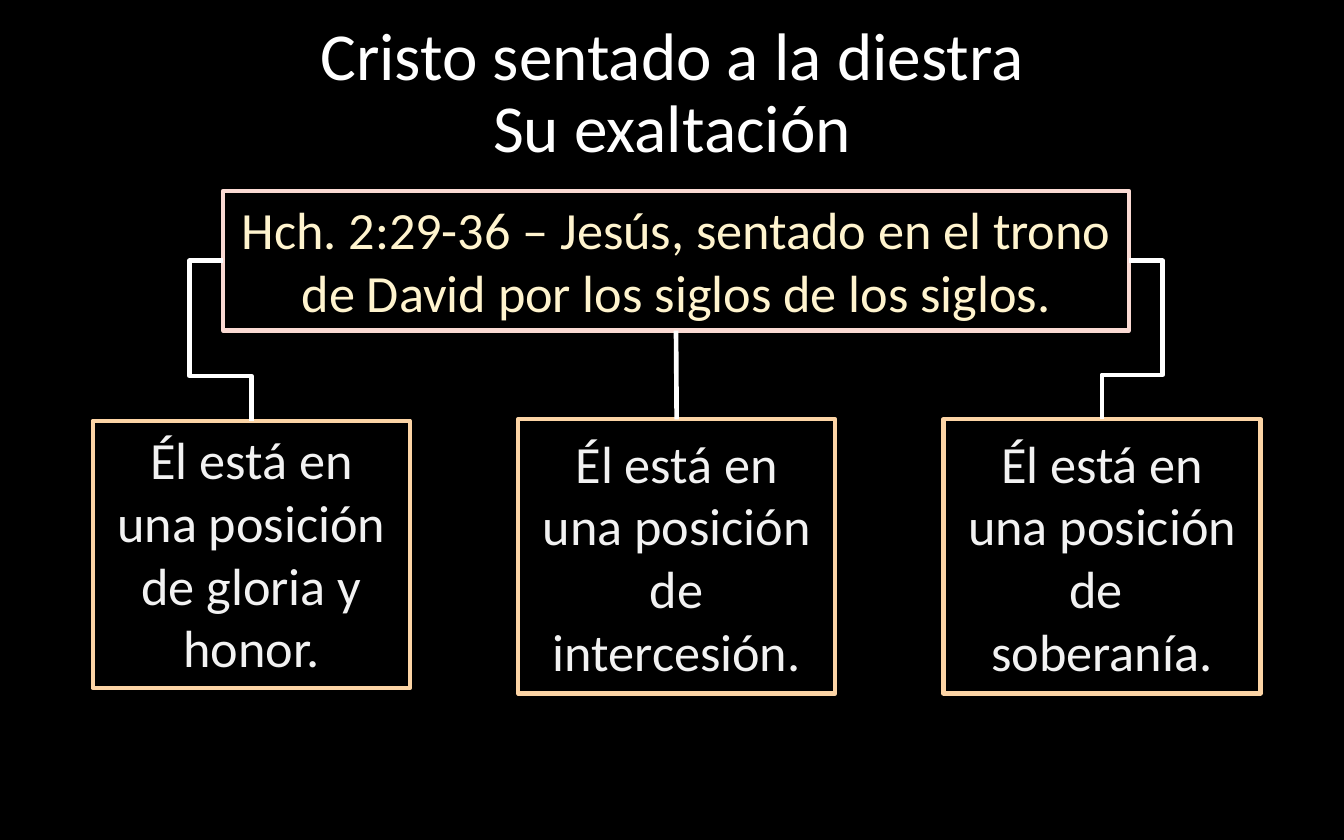
import dataclasses

import lxml.etree
import pptx
import pptx.dml.color
import pptx.enum.shapes
import pptx.enum.text
import pptx.oxml.ns
import pptx.util

ANCHOR = pptx.enum.text.MSO_ANCHOR
AUTO_SIZE = pptx.enum.text.MSO_AUTO_SIZE
CONNECTOR = pptx.enum.shapes.MSO_CONNECTOR

WIDTH, HEIGHT = 10, 6.25
MARGIN, COLUMN_STEP, COLUMN_WIDTH = 0.69, 3.165, 2.36
TOP, LEFT, BOTTOM, RIGHT = range(4)

COLORS = {
    "background": "000000",
    "title": "FFFFFF",
    "verse": "FFF4CE",
    "verse_border": "FADAD3",
    "position": "F2F2F2",
    "position_border": "FCD4A5",
    "link": "FFFFFF",
}


@dataclasses.dataclass
class Box:
    text: str
    left: float
    top: float
    width: float
    height: float
    role: str
    anchor: ANCHOR = ANCHOR.MIDDLE
    auto_size: AUTO_SIZE = AUTO_SIZE.NONE


def rgb(name: str) -> pptx.dml.color.RGBColor:
    return pptx.dml.color.RGBColor.from_string(COLORS[name])


def place(shape, left: float, top: float, width: float, height: float) -> None:
    lengths = {"left": left, "top": top, "width": width, "height": height}
    for name, value in lengths.items():
        setattr(shape, name, pptx.util.Inches(value))


def format_text(frame, text: str, size: float, color: str, spacing: float = 1.0) -> None:
    frame.text = text
    paragraph = frame.paragraphs[0]
    paragraph.alignment = pptx.enum.text.PP_ALIGN.CENTER
    paragraph.line_spacing = spacing
    font_format = {"name": "Calibri", "size": pptx.util.Pt(size), "bold": False}
    for run in paragraph.runs:
        for name, value in font_format.items():
            setattr(run.font, name, value)
        run.font.color.rgb = rgb(color)


def draw_box(slide, box: Box):
    shape = slide.shapes.add_shape(pptx.enum.shapes.MSO_SHAPE.RECTANGLE, 0, 0, 0, 0)
    place(shape, box.left, box.top, box.width, box.height)
    shape.shadow.inherit = False
    shape.fill.background()
    shape.line.color.rgb = rgb(f"{box.role}_border")
    shape.line.width = pptx.util.Pt(2.25)
    frame_format = {
        "word_wrap": True,
        "vertical_anchor": box.anchor,
        "auto_size": box.auto_size,
    }
    for name, value in frame_format.items():
        setattr(shape.text_frame, name, value)
    format_text(shape.text_frame, box.text, 28, box.role)
    return shape


def draw_link(slide, kind: CONNECTOR, source, side: int, target):
    link = slide.shapes.add_connector(kind, 0, 0, 0, 0)
    link.begin_connect(source, side)
    link.end_connect(target, TOP)
    link.line.color.rgb = rgb("link")
    link.line.width = pptx.util.Pt(2.5)
    properties = link._element.spPr
    lxml.etree.SubElement(properties, pptx.oxml.ns.qn("a:effectLst"))
    return link


def bend_outward(link, reach: float, turn: float) -> None:
    """Leave sideways by `reach` inches, then turn back at share `turn` of the height."""
    geometry = link._element.spPr.find(pptx.oxml.ns.qn("a:prstGeom"))
    geometry.set("prst", "bentConnector4")
    guides = geometry.find(pptx.oxml.ns.qn("a:avLst"))
    shares = {"adj1": -pptx.util.Inches(reach) / link.width, "adj2": turn}
    for name, share in shares.items():
        guide = lxml.etree.SubElement(guides, pptx.oxml.ns.qn("a:gd"))
        guide.set("name", name)
        guide.set("fmla", f"val {round(share * 100000)}")


def main() -> None:
    deck = pptx.Presentation()
    deck.slide_width = pptx.util.Inches(WIDTH)
    deck.slide_height = pptx.util.Inches(HEIGHT)
    slide = deck.slides.add_slide(deck.slide_layouts[5])
    slide.background.fill.solid()
    slide.background.fill.fore_color.rgb = rgb("background")

    # Title
    title = slide.shapes.title
    place(title, MARGIN, 0.1, WIDTH - 2 * MARGIN, 1.21)
    title.text_frame.vertical_anchor = ANCHOR.MIDDLE
    format_text(title.text_frame, "Cristo sentado a la diestra\vSu exaltación",
                36, "title", 0.9)

    # Bible verse
    verse = draw_box(slide, Box(
        "Hch. 2:29-36 – Jesús, sentado en el trono de David por los siglos de los siglos.",
        1.66, 1.42, 6.74, 1.04, "verse", ANCHOR.TOP, AUTO_SIZE.SHAPE_TO_FIT_TEXT))

    # Three positions, one per column
    columns = [MARGIN + COLUMN_STEP * index for index in range(3)]
    glory, intercession, sovereignty = [draw_box(slide, box) for box in (
        Box("Él está en una posición de gloria y honor.", columns[0], 3.13,
            COLUMN_WIDTH, 1.99, "position", ANCHOR.TOP, AUTO_SIZE.SHAPE_TO_FIT_TEXT),
        Box("Él está en una posición de intercesión.", columns[1], 3.12,
            COLUMN_WIDTH, 2.04, "position"),
        Box("Él está en una posición de \vsoberanía.", columns[2], 3.12,
            COLUMN_WIDTH, 2.04, "position"),
    )]

    # Links from the verse to each position
    for side, position in ((LEFT, glory), (RIGHT, sovereignty)):
        bend_outward(draw_link(slide, CONNECTOR.ELBOW, verse, side, position), 0.25, 0.72)
    draw_link(slide, CONNECTOR.STRAIGHT, verse, BOTTOM, intercession)

    deck.save("out.pptx")


if __name__ == "__main__":
    main()
